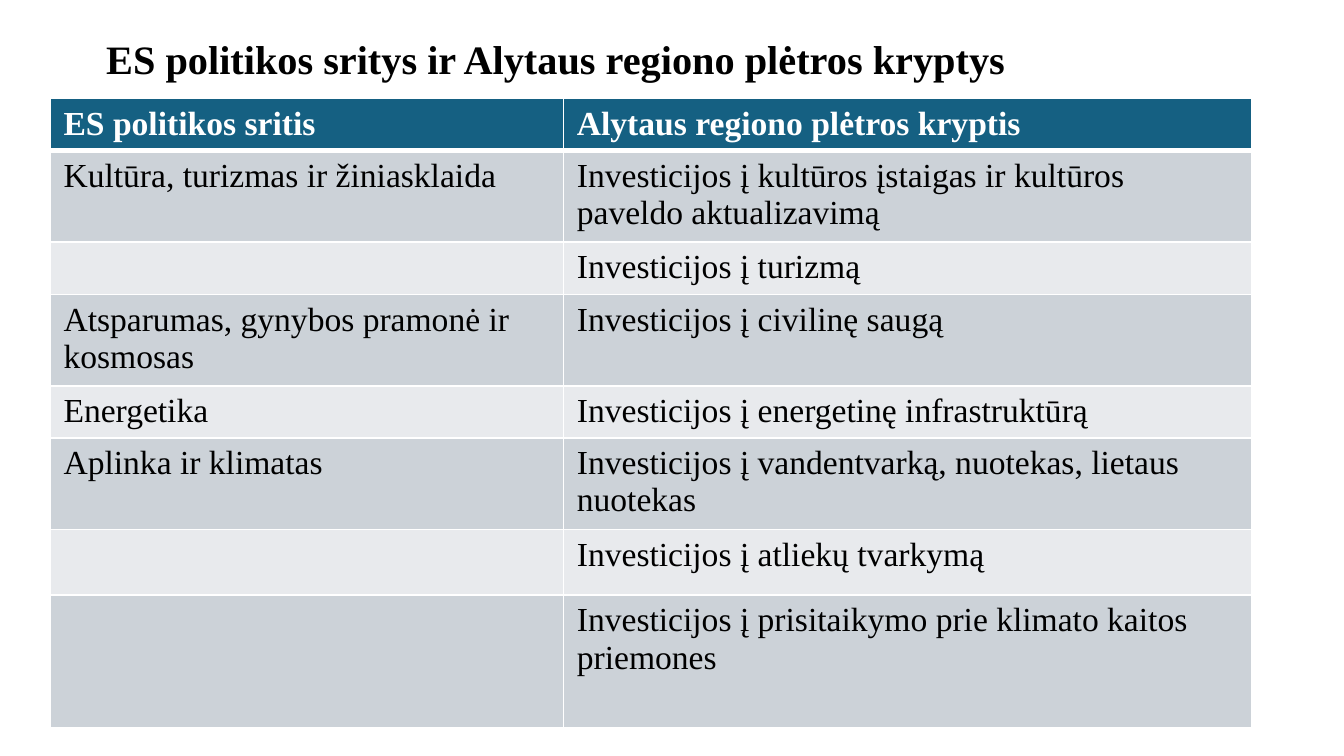
import pptx
import pptx.dml.color
import pptx.enum.text
import pptx.oxml
import pptx.oxml.ns
import pptx.util

HUES = {
    "ink": "000000",
    "white": "FFFFFF",
    "head": "156082",
    "dark": "CCD2D8",
    "light": "E8EAED",
}
FONT = "Times New Roman"
ONE, TWO = 6.9, 12.1
COLS = [38.2, 51.2]
ROWS = [
    (ONE, "ES politikos sritis", "Alytaus regiono plėtros kryptis"),
    (TWO, "Kultūra, turizmas ir žiniasklaida",
     "Investicijos į kultūros įstaigas ir kultūros paveldo aktualizavimą"),
    (ONE, "", "Investicijos į turizmą"),
    (TWO, "Atsparumas, gynybos pramonė ir kosmosas", "Investicijos į civilinę saugą"),
    (ONE, "Energetika", "Investicijos į energetinę infrastruktūrą"),
    (TWO, "Aplinka ir klimatas", "Investicijos į vandentvarką, nuotekas, lietaus nuotekas"),
    (8.7, "", "Investicijos į atliekų tvarkymą"),
    (17.6, "", "Investicijos į prisitaikymo prie klimato kaitos priemones"),
]


def tint(name):
    return pptx.dml.color.RGBColor.from_string(HUES[name])


def write(frame, text, size=18, hue="ink", bold=False, align=None, space=None):
    para = frame.paragraphs[0]
    para.alignment = align
    para.line_spacing = space
    if not text:
        para._p.append(pptx.oxml.parse_xml(
            f'<a:endParaRPr {pptx.oxml.ns.nsdecls("a")} sz="{round(size * 100)}">'
            f'<a:latin typeface="{FONT}"/><a:ea typeface="{FONT}"/>'
            f'<a:cs typeface="{FONT}"/></a:endParaRPr>'))
        return
    run = para.add_run()
    run.text = text
    run.font.name = FONT
    run.font.size = pptx.util.Pt(size)
    run.font.bold = bold
    run.font.color.rgb = tint(hue)


class Deck:
    def __init__(self, wide, high):
        self.file = pptx.Presentation()
        self.file.slide_width = pptx.util.Inches(wide)
        self.file.slide_height = pptx.util.Inches(high)
        self.slide = self.file.slides.add_slide(self.file.slide_layouts[5])

    def across(self, share):
        return round(self.file.slide_width * share / 100)

    def down(self, share):
        return round(self.file.slide_height * share / 100)

    def title(self, text, left, top, wide, high):
        box = self.slide.shapes.title
        box.left, box.top = self.across(left), self.down(top)
        box.width, box.height = self.across(wide), self.down(high)
        frame = box.text_frame
        frame.word_wrap = True
        frame.auto_size = pptx.enum.text.MSO_AUTO_SIZE.NONE
        frame.vertical_anchor = pptx.enum.text.MSO_ANCHOR.MIDDLE
        write(frame, text, size=21.6, bold=True,
              align=pptx.enum.text.PP_ALIGN.LEFT, space=0.9)

    def edge(self, cell, **widths):
        props = cell._tc.get_or_add_tcPr()
        for spot, side in enumerate("LRTB"):
            line = pptx.oxml.parse_xml(
                f'<a:ln{side} {pptx.oxml.ns.nsdecls("a")} '
                f'w="{pptx.util.Pt(widths.get(side, 1))}"><a:solidFill>'
                f'<a:srgbClr val="{HUES["white"]}"/></a:solidFill></a:ln{side}>')
            props.insert(spot, line)

    def table(self, rows, cols, left, top):
        grid = self.slide.shapes.add_table(
            len(rows), len(cols), self.across(left), self.down(top),
            self.across(sum(cols)), self.down(sum(row[0] for row in rows))).table
        for col, wide in zip(grid.columns, cols):
            col.width = self.across(wide)
        for r, (high, *texts) in enumerate(rows):
            grid.rows[r].height = self.down(high)
            head = r == 0
            fill = "head" if head else "dark" if r % 2 else "light"
            for c, text in enumerate(texts):
                cell = grid.cell(r, c)
                cell.fill.solid()
                cell.fill.fore_color.rgb = tint(fill)
                self.edge(cell, T=3 if r == 1 else 1, B=3 if head else 1)
                write(cell.text_frame, text, hue="white" if head else "ink", bold=head)


def main():
    deck = Deck(10, 10 * 9 / 16)
    deck.title("ES politikos sritys ir Alytaus regiono plėtros kryptys", 6.9, 5.33, 86.2, 5.51)
    deck.table(ROWS, COLS, 3.73, 13.05)
    deck.file.save("out.pptx")


if __name__ == "__main__":
    main()
